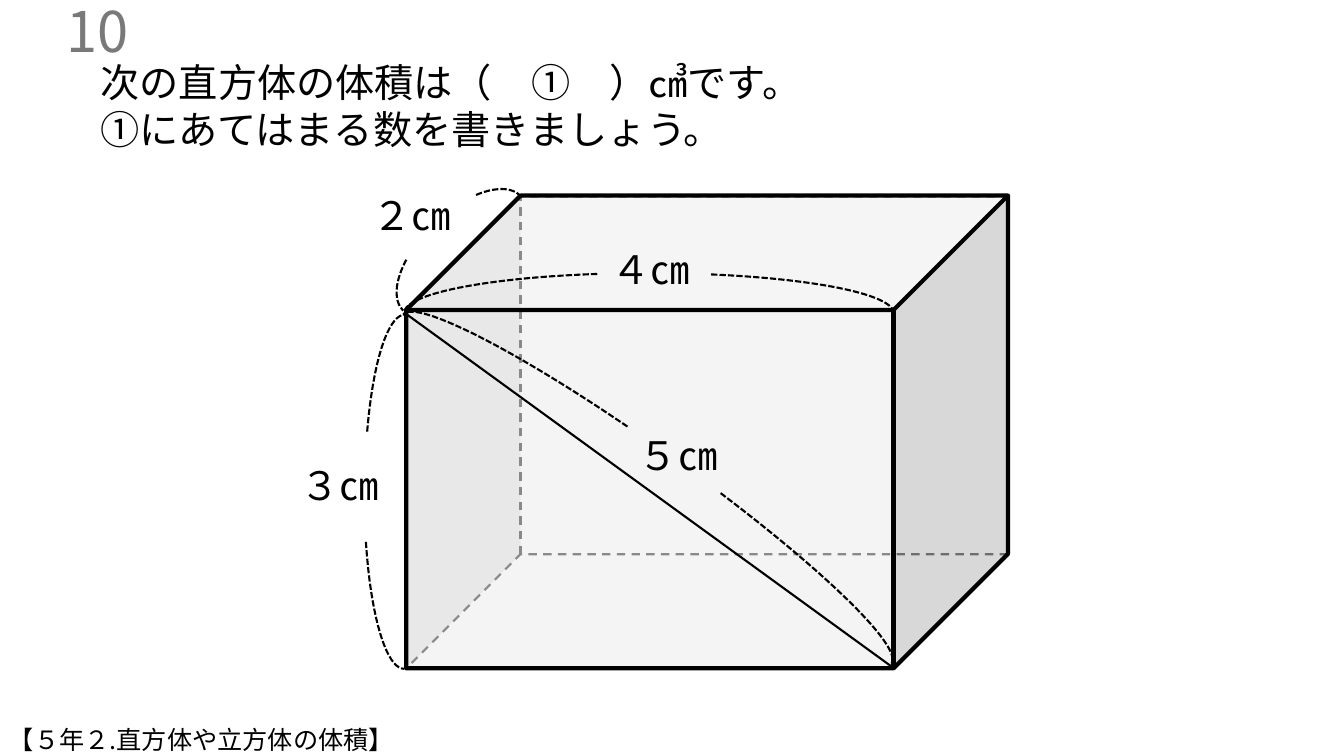
from dataclasses import dataclass

from lxml.etree import SubElement
from pptx import Presentation
from pptx.dml.color import RGBColor
from pptx.enum.dml import MSO_LINE
from pptx.enum.shapes import MSO_CONNECTOR, MSO_SHAPE
from pptx.enum.text import MSO_ANCHOR, MSO_AUTO_SIZE, PP_ALIGN
from pptx.oxml.ns import qn
from pptx.util import Pt


@dataclass(frozen=True)
class Theme:
    font: str = "Noto Sans CJK JP"
    ink: RGBColor = RGBColor(0x00, 0x00, 0x00)
    number_gray: RGBColor = RGBColor(0x79, 0x79, 0x79)
    face: RGBColor = RGBColor(0xF2, 0xF2, 0xF2)
    face_opacity: int = 57
    number_size: int = 40
    body_size: int = 28
    footer_size: int = 18
    thin: float = 1.5
    thick: float = 3
    line_height: float = 1.2


class SlideBuilder:
    def __init__(self, slide, theme):
        self.slide = slide
        self.theme = theme

    def set_line(self, line, width, dash=None):
        line.color.rgb = self.theme.ink
        for name, value in {"width": Pt(width), "dash_style": dash}.items():
            setattr(line, name, value)

    def add_outline(self, preset, box, adjustments, rotation=0):
        shape = self.slide.shapes.add_shape(preset, *map(Pt, box))
        shape.shadow.inherit = False
        shape.rotation = rotation
        for index, value in enumerate(adjustments):
            shape.adjustments[index] = value
        return shape

    def cube(self, box, width, dash=None, rotation=0):
        shape = self.add_outline(MSO_SHAPE.CUBE, box, [0.242], rotation)
        shape.fill.solid()
        shape.fill.fore_color.rgb = self.theme.face
        color = shape._element.spPr.find(qn("a:solidFill"))[0]
        SubElement(color, qn("a:alpha"), val=str(self.theme.face_opacity * 1000))
        self.set_line(shape.line, width, dash)

    def arc(self, box, start, rotation, mirrored):
        shape = self.add_outline(MSO_SHAPE.ARC, box, [start, 0], rotation)
        shape.fill.background()
        self.set_line(shape.line, self.theme.thin, MSO_LINE.SQUARE_DOT)
        if mirrored:
            shape._element.spPr.find(qn("a:xfrm")).set("flipH", "1")

    def dimension(self, right_box, left_box, rotation=0):
        self.arc(right_box, 196.706, rotation, mirrored=False)
        self.arc(left_box, 193.003, rotation, mirrored=True)

    def diagonal(self, start, end):
        connector = self.slide.shapes.add_connector(
            MSO_CONNECTOR.STRAIGHT, *map(Pt, start + end))
        SubElement(connector._element.spPr, qn("a:effectLst"))
        self.set_line(connector.line, self.theme.thin)

    def add_words(self, paragraph, words, size, color):
        run = paragraph.add_run()
        run.text = words
        run.font.color.rgb = color
        for name, value in {"name": self.theme.font, "size": Pt(size)}.items():
            setattr(run.font, name, value)
        SubElement(run._r.get_or_add_rPr(), qn("a:ea"), typeface=self.theme.font)

    def text(self, box, lines, size):
        frame = self.slide.shapes.add_textbox(*map(Pt, box)).text_frame
        settings = {"word_wrap": True, "margin_top": Pt(6),
                    "auto_size": MSO_AUTO_SIZE.SHAPE_TO_FIT_TEXT}
        for name, value in settings.items():
            setattr(frame, name, value)
        for index, line in enumerate(lines):
            paragraph = frame.add_paragraph() if index else frame.paragraphs[0]
            paragraph.line_spacing = Pt(size * self.theme.line_height)
            self.add_words(paragraph, line, size, self.theme.ink)

    def label(self, left, top, words):
        self.text((left, top, 85, 41), [words], self.theme.body_size)

    def number(self, box, words):
        frame = self.slide.shapes.add_textbox(*map(Pt, box)).text_frame
        settings = {"word_wrap": True, "vertical_anchor": MSO_ANCHOR.MIDDLE}
        for name, value in settings.items():
            setattr(frame, name, value)
        paragraph = frame.paragraphs[0]
        paragraph.alignment = PP_ALIGN.RIGHT
        self.add_words(paragraph, words, self.theme.number_size, self.theme.number_gray)


def main():
    presentation = Presentation()
    presentation.slide_width, presentation.slide_height = Pt(960), Pt(540)
    slide = presentation.slides.add_slide(presentation.slide_layouts[6])
    theme = Theme()
    builder = SlideBuilder(slide, theme)

    # Box: hidden edges behind, visible edges in front
    builder.cube((290.2, 140.4, 429.8, 337), theme.thin, MSO_LINE.DASH, rotation=180)
    builder.label(207.4, 323.3, "３㎝")
    builder.cube((290.2, 139.7, 429.8, 337.7), theme.thick)

    # Depth, height and width
    builder.dimension((271.4, 151.9, 117.4, 58.3), (271.4, 152.6, 115.9, 57.6), 315.6)
    builder.dimension((162.7, 322.6, 253.4, 57.6), (163.4, 324, 250.6, 56.9), 270)
    builder.dimension((288.7, 195.1, 349.9, 57.6), (288.7, 195.1, 346.3, 56.9))
    builder.label(259.2, 131, "２㎝")
    builder.label(429.8, 169.2, "４㎝")

    # Question number
    builder.number((-117.4, 7.2, 216, 28.8), "10")

    # Diagonal of the front face
    builder.diagonal((288.7, 223.2), (638.6, 477.4))
    builder.dimension((247, 320.4, 429.8, 57.6), (248.4, 319.7, 424.8, 56.9), 35.5)
    builder.label(449.3, 302.4, "５㎝")

    # Question and unit name
    builder.text((64.8, 36, 830.2, 74.9),
                 ["次の直方体の体積は（　①　）㎤です。", "①にあてはまる数を書きましょう。"],
                 theme.body_size)
    builder.text((-0.7, 511.2, 539.3, 28.8), ["【５年２.直方体や立方体の体積】"],
                 theme.footer_size)

    presentation.save("out.pptx")


if __name__ == "__main__":
    main()
